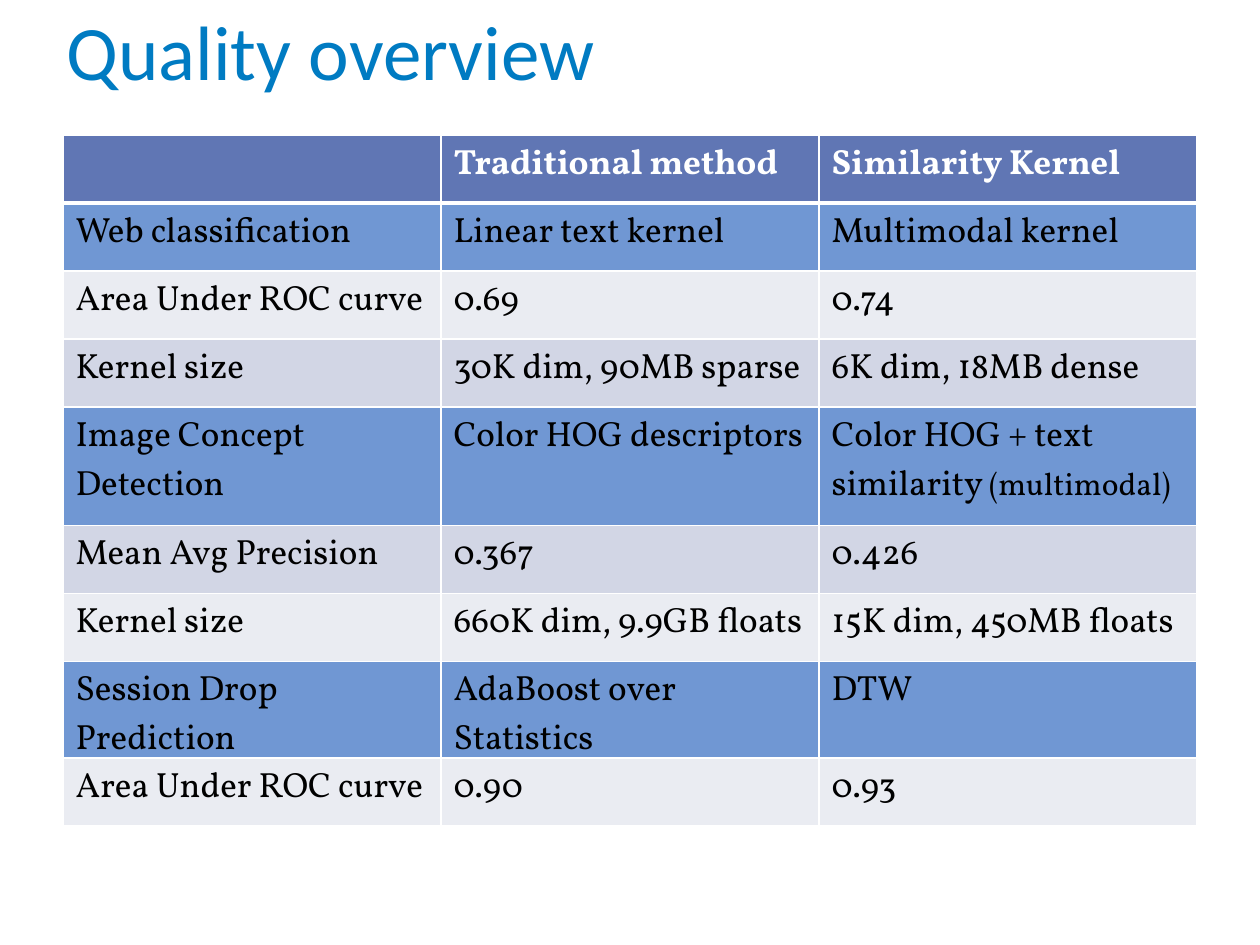
from lxml import etree
from pptx import Presentation
from pptx.dml.color import RGBColor
from pptx.enum.text import MSO_ANCHOR
from pptx.oxml.ns import qn
from pptx.util import Inches, Pt

BOTTOM = MSO_ANCHOR.BOTTOM
COLORS = {"title": "007BC2", "header": "6076B4", "section": "7097D3", "light": "EAECF2",
          "dark": "D2D6E5", "white": "FFFFFF", "black": "000000"}
ROWS = [
    ("header", ["", "Traditional method", "Similarity Kernel"]),
    ("section", ["Web classification", "Linear text kernel", "Multimodal kernel"]),
    ("light", ["Area Under ROC curve", "0.69", "0.74"]),
    ("dark", ["Kernel size", "30K dim, 90MB sparse", "6K dim, 18MB dense"]),
    ("section", ["Image Concept Detection", "Color HOG descriptors", "Color HOG + text similarity "]),
    ("dark", ["Mean Avg Precision", "0.367", "0.426"]),
    ("light", ["Kernel size", "660K dim, 9.9GB floats", "15K dim, 450MB floats"]),
    ("section", ["Session Drop Prediction", "AdaBoost over Statistics", "DTW"]),
    ("light", ["Area Under ROC curve", "0.90", "0.93"]),
]


def rgb(name):
    return RGBColor.from_string(COLORS[name])


def add_border(cell, side, width):
    ln = etree.SubElement(cell._tc.get_or_add_tcPr(), qn(f"a:ln{side}"), w=str(Pt(width)))
    fill = etree.SubElement(ln, qn("a:solidFill"))
    etree.SubElement(fill, qn("a:srgbClr"), val=COLORS["white"])


prs = Presentation()
prs.slide_width, prs.slide_height = Inches(10), Inches(7.5)
s = prs.slides.add_slide(prs.slide_layouts[6])

title = s.shapes.add_textbox(Inches(0.43), Inches(0.01), Inches(9.13), Inches(0.8))
tf = title.text_frame
tf.word_wrap = True
tf.vertical_anchor = BOTTOM
p = tf.paragraphs[0]
p.text = "Quality overview"
p.line_spacing = Pt(58)
p.font.size = Pt(44)
p.font.name = "Calibri"
p.font.color.rgb = rgb("title")

table = s.shapes.add_table(len(ROWS), 3, Inches(0.5), Inches(1.07), Inches(9), Inches(5.26)).table
for col in table.columns:
    col.width = Inches(3)

for i, (kind, texts) in enumerate(ROWS):
    table.rows[i].height = Inches(0.94 if i == 4 else 0.54)
    for j, text in enumerate(texts):
        cell = table.cell(i, j)
        widths = {"L": 1, "R": 1, "T": 3 if i == 1 else 1, "B": 3 if i == 0 else 1}
        for side, width in widths.items():
            add_border(cell, side, width)
        cell.fill.solid()
        cell.fill.fore_color.rgb = rgb(kind)
        p = cell.text_frame.paragraphs[0]
        p.text = text
        p.font.size = Pt(20)
        p.font.name = "Vollkorn"
        p.font.bold = kind == "header"
        p.font.color.rgb = rgb("white" if kind == "header" else "black")

r = table.cell(4, 2).text_frame.paragraphs[0].add_run()
r.text = "(multimodal)"
r.font.size = Pt(18)

prs.save("out.pptx")
